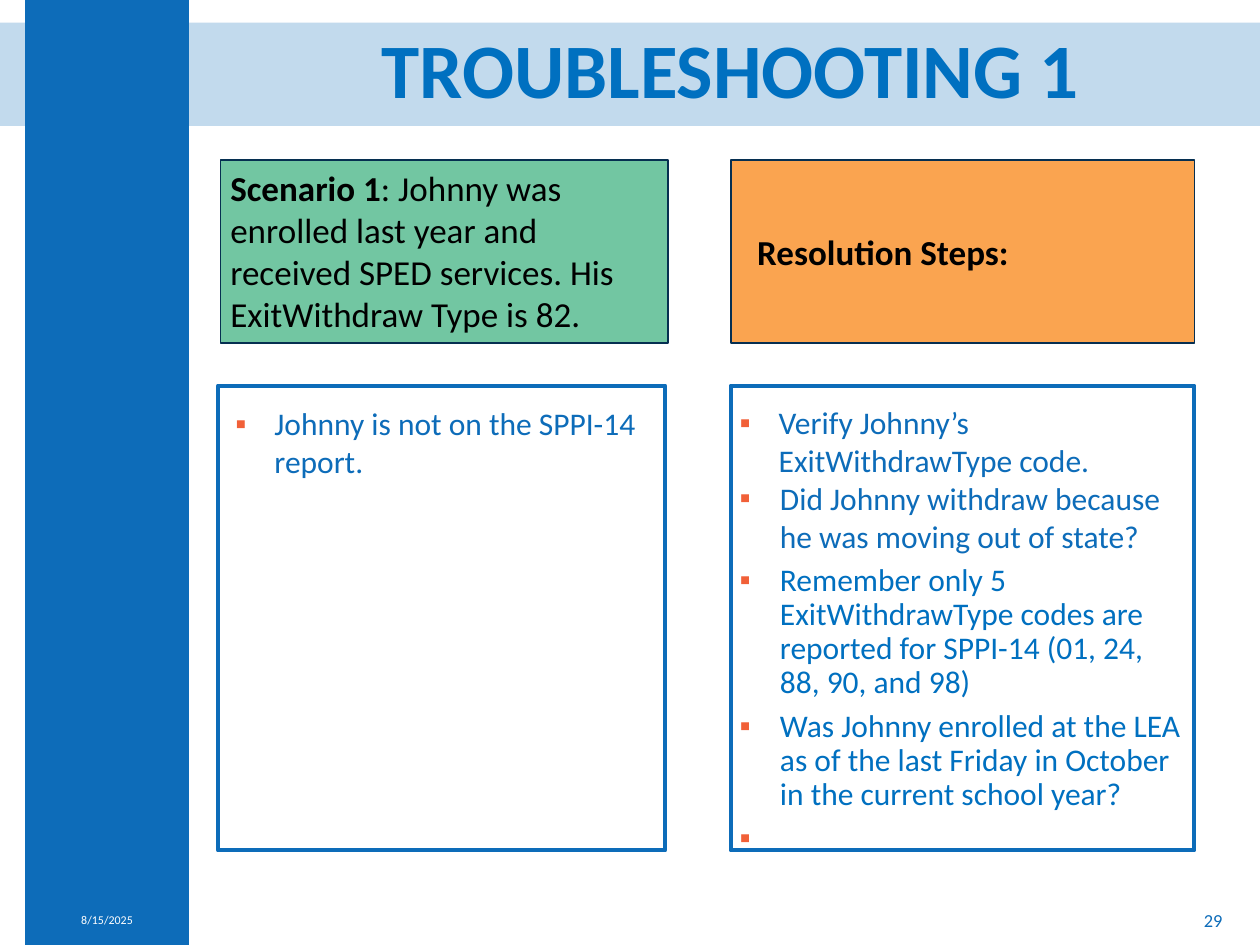
from lxml import etree
from pptx import Presentation
from pptx.dml.color import RGBColor
from pptx.enum.shapes import MSO_SHAPE
from pptx.enum.text import MSO_ANCHOR, PP_ALIGN
from pptx.oxml.ns import qn
from pptx.util import Inches, Pt

RECT = MSO_SHAPE.RECTANGLE
TOP, MIDDLE = MSO_ANCHOR.TOP, MSO_ANCHOR.MIDDLE
LEFT, CENTER, RIGHT = PP_ALIGN.LEFT, PP_ALIGN.CENTER, PP_ALIGN.RIGHT
FONT = "Calibri"
COLORS = {
    "blue": "0D6CB9", "title": "0070C0", "navy": "062F51", "green": "72C6A2",
    "orange": "FAA450", "bullet": "F16038", "black": "000000", "white": "FFFFFF",
}


def rgb(name):
    """Return the named palette colour."""
    return RGBColor.from_string(COLORS[name])


def add_rect(slide, box, fill=None, line=None, width=1, alpha=None):
    """Draw a rectangle with optional fill, outline and opacity percentage."""
    sp = slide.shapes.add_shape(RECT, *map(Inches, box))
    sp.shadow.inherit = False
    if fill:
        sp.fill.solid()
        sp.fill.fore_color.rgb = rgb(fill)
    else:
        sp.fill.background()
    if alpha:
        clr = sp.fill._xPr.find(".//" + qn("a:srgbClr"))
        etree.SubElement(clr, qn("a:alpha")).set("val", str(alpha * 1000))
    if line:
        sp.line.color.rgb = rgb(line)
        sp.line.width = Pt(width)
    else:
        sp.line.fill.background()
    return sp


def set_frame(sp, anchor=TOP, insets=(0.1, 0.05)):
    """Set wrapping, anchor and margins, and return the text frame."""
    tf = sp.text_frame
    tf.word_wrap = True
    tf.vertical_anchor = anchor
    tf.margin_left = tf.margin_right = Inches(insets[0])
    tf.margin_top = tf.margin_bottom = Inches(insets[1])
    return tf


def add_text(slide, box, anchor=TOP, insets=(0.1, 0.05)):
    """Add a text box and return its text frame."""
    return set_frame(slide.shapes.add_textbox(*map(Inches, box)), anchor, insets)


def add_run(p, text, size, color, bold=False):
    """Append one formatted run to a paragraph."""
    r = p.add_run()
    r.text = text
    r.font.name = FONT
    r.font.size = Pt(size)
    r.font.bold = bold
    r.font.color.rgb = rgb(color)


def set_bullet(p, indent):
    """Give a paragraph a square bullet with a hanging indent."""
    pPr = p._p.get_or_add_pPr()
    pPr.set("marL", str(Inches(indent)))
    pPr.set("indent", str(-Inches(indent)))
    clr = etree.SubElement(pPr, qn("a:buClr"))
    etree.SubElement(clr, qn("a:srgbClr")).set("val", COLORS["bullet"])
    etree.SubElement(pPr, qn("a:buFont")).set("typeface", "Arial")
    etree.SubElement(pPr, qn("a:buChar")).set("char", "▪")


def add_bullets(tf, items):
    """Fill a frame with bullets given as text, colour and tight spacing."""
    for i, (text, color, tight) in enumerate(items):
        p = tf.add_paragraph() if i else tf.paragraphs[0]
        set_bullet(p, 0.32 if i else 0.31)
        p.alignment = LEFT
        if tight:
            p.line_spacing = 0.9
            p.space_before = Pt(5.6)
        add_run(p, text, 18, color)


def add_label(slide, box, text, size, color, align, insets=(0.1, 0.05), bold=False):
    """Add a single vertically centred line of text."""
    p = add_text(slide, box, MIDDLE, insets).paragraphs[0]
    p.alignment = align
    add_run(p, text, size, color, bold)
    return p


def add_frame(slide):
    """Draw the banner, side bar, title, date and slide number."""
    add_rect(slide, (0, 0.18, 10, 0.82), "blue", alpha=25)
    add_rect(slide, (0.2, 0, 1.3, 7.5), "blue")
    add_label(slide, (0.2, 7.1, 1.3, 0.4), "8/15/2025", 6.8, "white", CENTER, (0.06, 0.03))
    add_label(slide, (7.55, 7.1, 2.25, 0.4), "29", 10.5, "blue", RIGHT)
    p = add_label(slide, (1.9, 0.17, 7.8, 0.82), "TROUBLESHOOTING 1", 44, "title",
                  CENTER, bold=True)
    p.line_spacing = 0.9


def add_scenario(slide, box):
    """Build the scenario column: green heading above an outlined list."""
    x, y, w, h = box
    add_rect(slide, (x + 0.02, y, w, 1.45), "green", "navy")
    p = add_text(slide, (x, y, w - 0.05, 1.45)).paragraphs[0]
    add_run(p, "Scenario 1", 20, "black", True)
    add_run(p, ": Johnny was enrolled last year and received SPED services. "
               "His ExitWithdraw Type is 82.", 20, "black")
    add_rect(slide, (x, y + 1.79, w, h - 1.79), line="blue", width=2.25)
    tf = add_text(slide, (x + 0.04, y + 1.89, w - 0.07, 1.31))
    add_bullets(tf, [("Johnny is not on the SPPI-14 report.", "blue", False)])


def add_resolution(slide, box):
    """Build the resolution column: orange heading above an outlined list."""
    x, y, w, h = box
    tf = set_frame(add_rect(slide, (x, y, w, 1.45), "orange", "navy"), MIDDLE, (0.21, 0.05))
    tf.paragraphs[0].alignment = LEFT
    add_run(tf.paragraphs[0], "Resolution Steps:", 20, "black", True)
    add_rect(slide, (x, y + 1.79, w, h - 1.79), line="blue", width=2.25)
    tf = add_text(slide, (x, y + 1.89, w, h - 1.79), insets=(0.07, 0.04))
    add_bullets(tf, [
        ("Verify Johnny’s ExitWithdrawType code.", "blue", False),
        ("Did Johnny withdraw because he was moving out of state?", "blue", False),
        ("Remember only 5 ExitWithdrawType codes are reported for SPPI-14 "
         "(01, 24, 88, 90, and 98)", "title", True),
        ("Was Johnny enrolled at the LEA as of the last Friday in October "
         "in the current school year?", "title", True),
        (" ", "title", True),
    ])


def main():
    """Build and save the slide."""
    prs = Presentation()
    prs.slide_width, prs.slide_height = Inches(10), Inches(7.5)
    slide = prs.slides.add_slide(prs.slide_layouts[6])
    add_frame(slide)
    add_scenario(slide, (1.73, 1.27, 3.55, 5.48))
    add_resolution(slide, (5.8, 1.27, 3.68, 5.48))
    prs.save("out.pptx")


if __name__ == "__main__":
    main()
